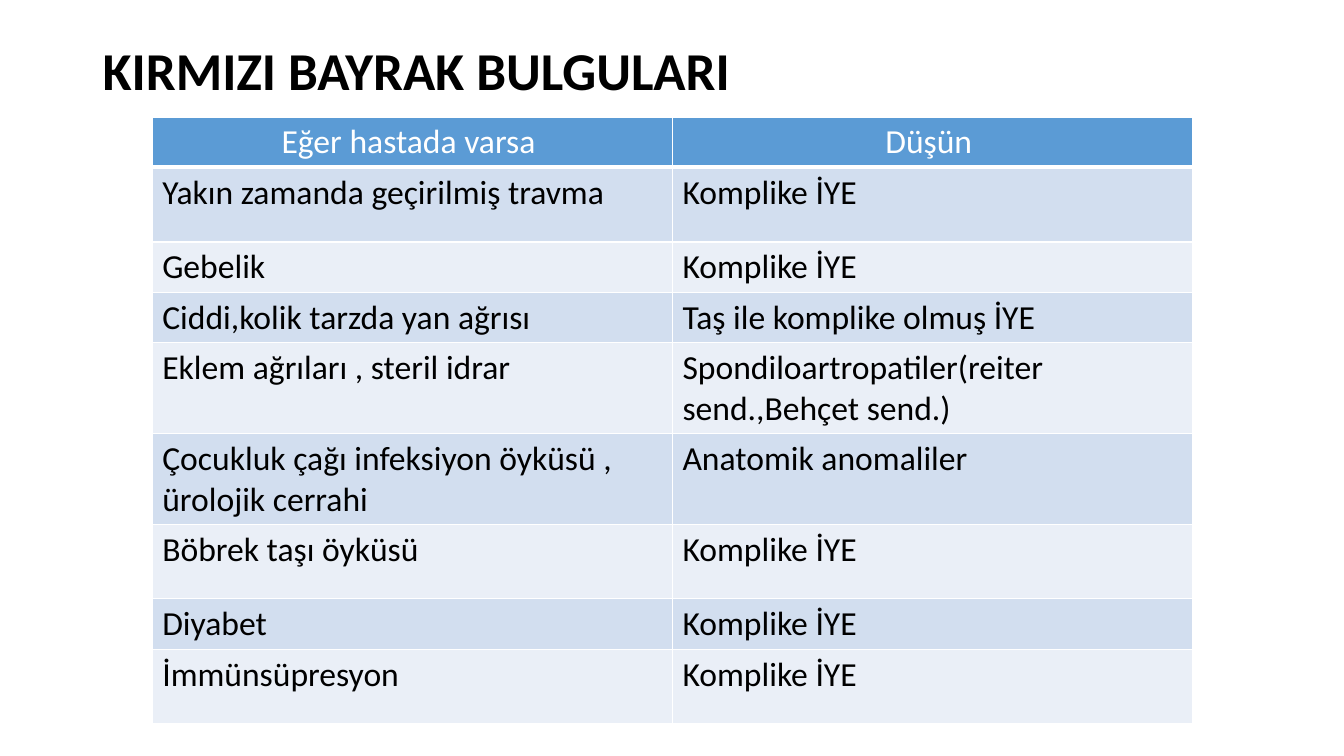
from dataclasses import dataclass

from lxml.etree import SubElement
from pptx import Presentation
from pptx.dml.color import RGBColor
from pptx.enum.text import MSO_ANCHOR as Anchor, PP_ALIGN as Align
from pptx.oxml.ns import qn
from pptx.slide import Slide
from pptx.table import _Cell as Cell
from pptx.text.text import _Paragraph as Paragraph
from pptx.util import Inches, Pt

FONT = "Calibri"
BLACK, WHITE = "000000", "FFFFFF"
HEADER_FILL = "5B9BD5"
BAND_FILLS = ("D2DEEF", "EAEFF7")
COLUMN_WIDTH = 5.16


@dataclass(frozen=True)
class FindingRow:
    finding: str
    suspicion: str
    height: float = 0.44


HEADER = FindingRow("Eğer hastada varsa ", "Düşün ")
FINDINGS = [
    FindingRow("Yakın zamanda geçirilmiş travma", "Komplike İYE", 0.74),
    FindingRow("Gebelik", "Komplike İYE"),
    FindingRow("Ciddi,kolik tarzda yan ağrısı", "Taş ile komplike olmuş İYE"),
    FindingRow("Eklem ağrıları , steril idrar",
               "Spondiloartropatiler(reiter send.,Behçet send.)", 0.76),
    FindingRow("Çocukluk çağı infeksiyon öyküsü , ürolojik cerrahi",
               "Anatomik anomaliler", 0.76),
    FindingRow("Böbrek taşı öyküsü", "Komplike İYE", 0.74),
    FindingRow("Diyabet", "Komplike İYE"),
    FindingRow("İmmünsüpresyon", "Komplike İYE", 0.74),
]


def color(value: str) -> RGBColor:
    return RGBColor.from_string(value)


def add_span(para: Paragraph, text: str, size: float, ink: str, bold: bool = False) -> None:
    span = para.add_run()
    span.text = text
    span.font.name = FONT
    span.font.size = Pt(size)
    span.font.bold = bold
    span.font.color.rgb = color(ink)


def set_borders(cell: Cell, bottom: float) -> None:
    properties = cell._tc.get_or_add_tcPr()
    for side, width in (("L", 1), ("R", 1), ("T", 1), ("B", bottom)):
        line = SubElement(properties, qn(f"a:ln{side}"), w=str(Pt(width)))
        fill = SubElement(line, qn("a:solidFill"))
        SubElement(fill, qn("a:srgbClr"), val=WHITE)


def add_title(page: Slide, text: str) -> None:
    box = page.shapes.add_textbox(Inches(0.92), Inches(0), Inches(11.5), Inches(1.45))
    frame = box.text_frame
    frame.word_wrap = True
    frame.vertical_anchor = Anchor.MIDDLE
    para = frame.paragraphs[0]
    para.line_spacing = 0.9
    add_span(para, text, 38, BLACK, bold=True)


def add_findings_table(page: Slide, rows: list[FindingRow]) -> None:
    table = page.shapes.add_table(
        len(rows), 2, Inches(1.51), Inches(1.16),
        Inches(2 * COLUMN_WIDTH), Inches(sum(row.height for row in rows)),
    ).table
    table.first_row = False
    table.horz_banding = False
    for column in table.columns:
        column.width = Inches(COLUMN_WIDTH)
    for index, row in enumerate(rows):
        is_header = index == 0
        table.rows[index].height = Inches(row.height)
        for column_index, text in enumerate((row.finding, row.suspicion)):
            cell = table.cell(index, column_index)
            set_borders(cell, bottom=3 if is_header else 1)
            cell.fill.solid()
            cell.fill.fore_color.rgb = color(
                HEADER_FILL if is_header else BAND_FILLS[(index - 1) % 2])
            para = cell.text_frame.paragraphs[0]
            para.alignment = Align.CENTER if is_header else Align.LEFT
            add_span(para, text, 24, WHITE if is_header else BLACK)


def main() -> None:
    deck = Presentation()
    deck.slide_width = Inches(13.33)
    deck.slide_height = Inches(7.5)
    page = deck.slides.add_slide(deck.slide_layouts[6])
    add_title(page, "KIRMIZI BAYRAK BULGULARI")
    add_findings_table(page, [HEADER, *FINDINGS])
    deck.save("out.pptx")


if __name__ == "__main__":
    main()
